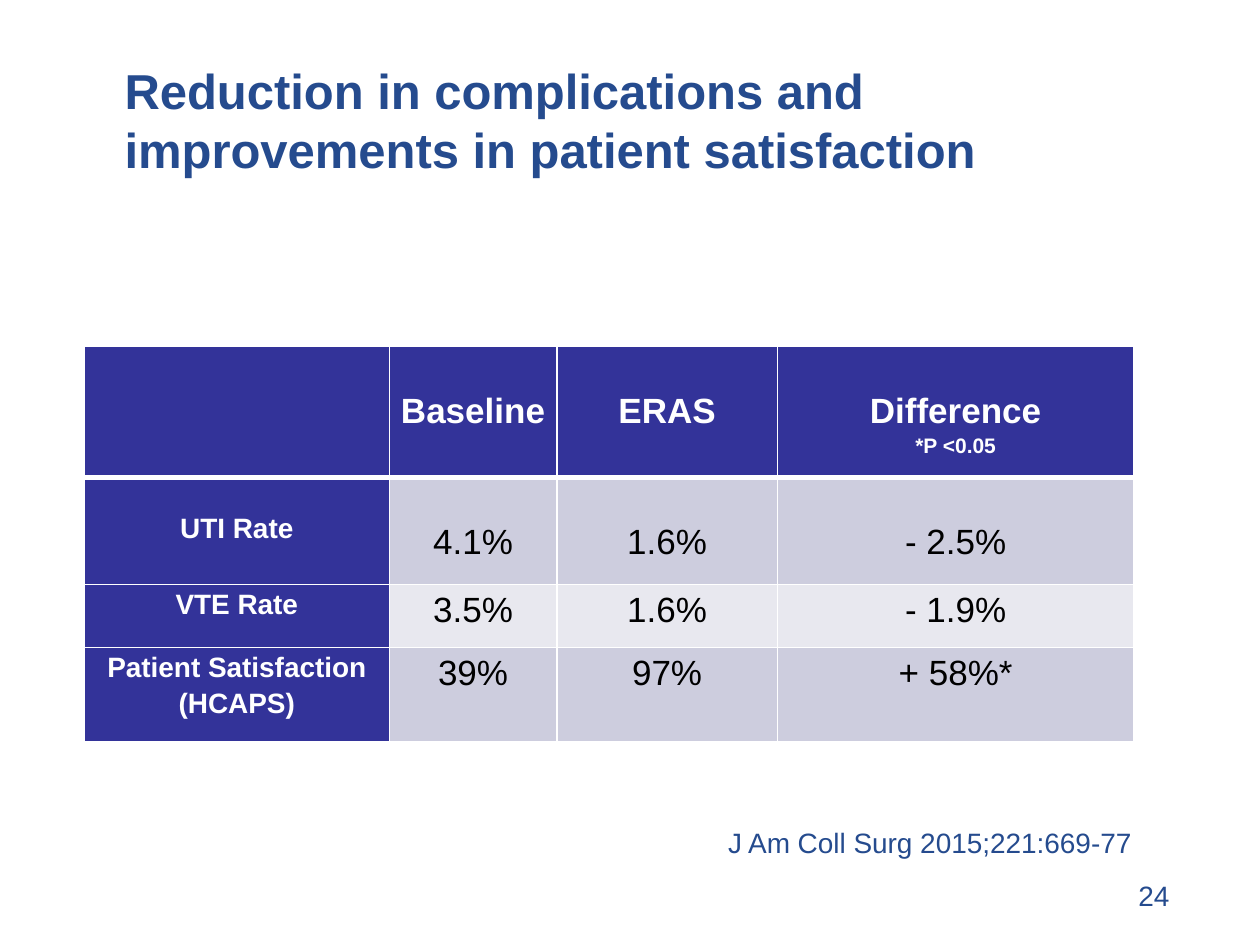
from pptx import Presentation
from pptx.dml.color import RGBColor
from pptx.enum.text import PP_ALIGN as Align
from pptx.oxml import parse_xml
from pptx.oxml.ns import nsdecls
from pptx.util import Inches, Pt

BLUE = RGBColor(0x25, 0x4B, 0x8E)
NAVY = RGBColor(0x33, 0x33, 0x99)
LILAC = RGBColor(0xCD, 0xCD, 0xDE)
PALE = RGBColor(0xE8, 0xE8, 0xEF)
WHITE = RGBColor(0xFF, 0xFF, 0xFF)
BLACK = RGBColor(0, 0, 0)

TITLE = "Reduction in complications and improvements in patient satisfaction"
ROWS = [
    ["", "Baseline", "ERAS", "Difference\n*P <0.05"],
    ["UTI Rate", "4.1%", "1.6%", "- 2.5%"],
    ["VTE Rate", "3.5%", "1.6%", "- 1.9%"],
    ["Patient Satisfaction\n(HCAPS)", "39%", "97%", "+ 58%*"],
]
WIDTHS = [2.42, 1.33, 1.75, 2.83]
HEIGHTS = [1.04, 0.85, 0.5, 0.75]
LABELS = [
    (TITLE, (0.89, 0.43, 7.28, 1.25), 28, True, True, Align.LEFT),
    ("J Am Coll Surg 2015;221:669-77", (5.68, 6.5, 3.44, 0.37), 16, False, False, Align.LEFT),
    ("24", (8.92, 6.92, 0.46, 0.33), 16, False, True, Align.RIGHT),
]


def style(para, size, color, bold, align):
    para.alignment = align
    font = para.font
    font.name, font.size, font.bold = "Arial", Pt(size), bold
    font.color.rgb = color


def add_label(slide, text, place, size, bold, wrap, align):
    frame = slide.shapes.add_textbox(*map(Inches, place)).text_frame
    frame.word_wrap = wrap
    frame.text = text
    style(frame.paragraphs[0], size, BLUE, bold, align)


def add_edges(cell, row):
    props = cell._tc.get_or_add_tcPr()
    thick = {"T": row == 1, "B": row == 0}
    for i, side in enumerate("LRTB"):
        width = Pt(3 if thick.get(side) else 1)
        props.insert(i, parse_xml(
            f'<a:ln{side} {nsdecls("a")} w="{width}"><a:solidFill>'
            f'<a:srgbClr val="{WHITE}"/></a:solidFill></a:ln{side}>'))


def fill_cell(cell, text, row, col):
    head = row == 0 or col == 0
    size = 16 if row and col == 0 else 20
    cell.fill.solid()
    cell.fill.fore_color.rgb = NAVY if head else LILAC if row % 2 else PALE
    add_edges(cell, row)
    cell.margin_left = cell.margin_right = Inches(0.07)
    cell.margin_top = Inches(size / 64 if row < 2 else 0)
    cell.margin_bottom = 0
    cell.text = text
    for para in cell.text_frame.paragraphs:
        small = para.text.startswith("*")
        style(para, 12 if small else size, WHITE if head else BLACK, head, Align.CENTER)
        para.line_spacing = 1.15


def add_grid(slide):
    grid = slide.shapes.add_table(
        len(ROWS), len(WIDTHS), Inches(0.67), Inches(2.75),
        Inches(sum(WIDTHS)), Inches(sum(HEIGHTS))).table
    for col, width in zip(grid.columns, WIDTHS):
        col.width = Inches(width)
    for row, height in zip(grid.rows, HEIGHTS):
        row.height = Inches(height)
    for r, texts in enumerate(ROWS):
        for c, text in enumerate(texts):
            fill_cell(grid.cell(r, c), text, r, c)


def main():
    deck = Presentation()
    deck.slide_width, deck.slide_height = Inches(10), Inches(7.5)
    slide = deck.slides.add_slide(deck.slide_layouts[6])
    for label in LABELS:
        add_label(slide, *label)
    add_grid(slide)
    deck.save("out.pptx")


if __name__ == "__main__":
    main()
